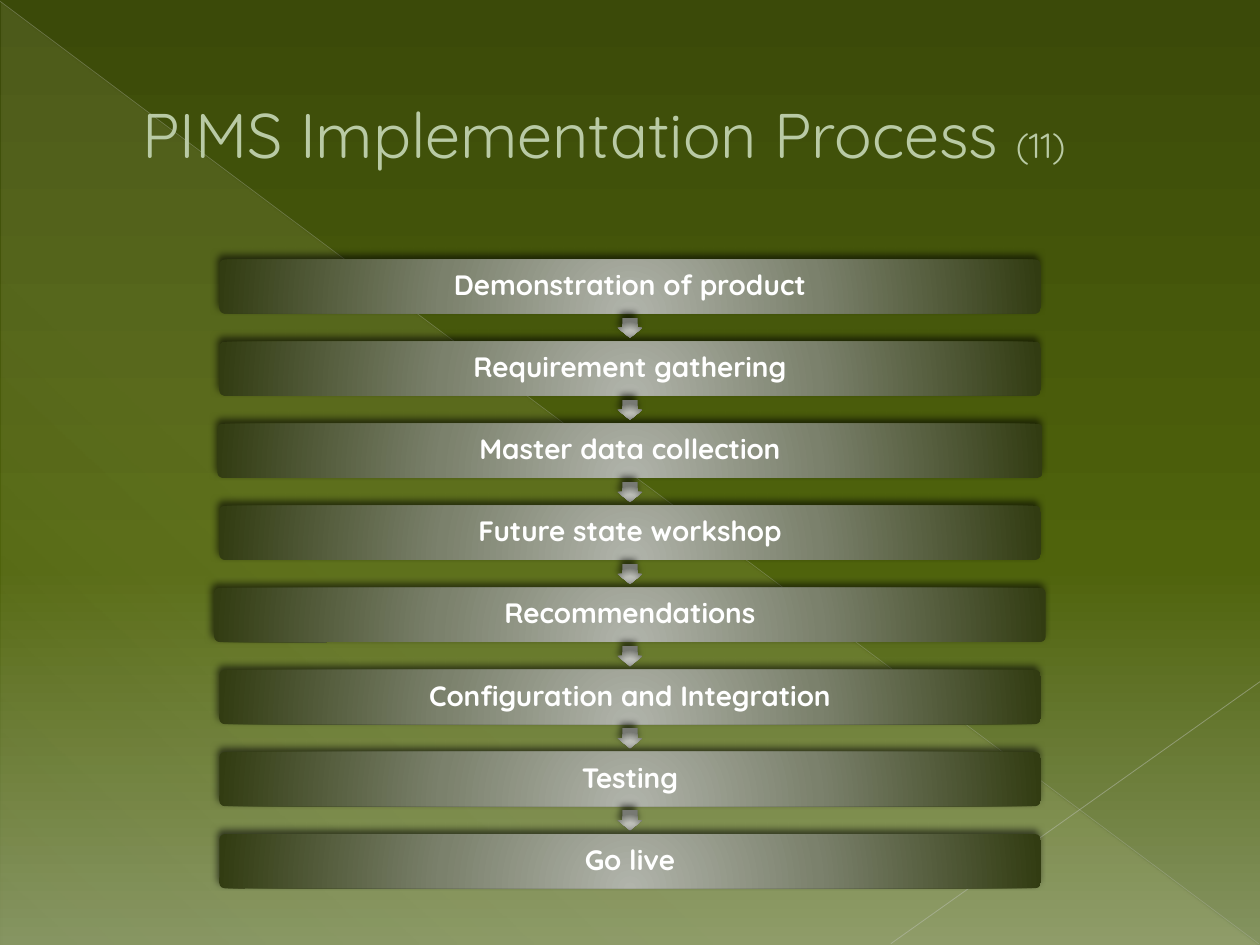
from lxml.etree import SubElement
from pptx import Presentation
from pptx.dml.color import RGBColor
from pptx.enum.shapes import MSO_CONNECTOR, MSO_SHAPE
from pptx.enum.text import MSO_ANCHOR, PP_ALIGN
from pptx.oxml.ns import qn
from pptx.util import Inches, Pt

SLIDE_WIDTH, SLIDE_HEIGHT = 10, 7.5
CENTER = SLIDE_WIDTH / 2
FONT = "Quicksand"

WHITE = RGBColor(0xFF, 0xFF, 0xFF)
BLACK = RGBColor(0x00, 0x00, 0x00)
TITLE_COLOR = RGBColor(0xB9, 0xCA, 0xA5)
TITLE_OUTLINE = RGBColor(0x72, 0x7D, 0x65)
LONG_LINE = RGBColor(0xBA, 0xBD, 0xB3)
SHORT_LINE = RGBColor(0xC1, 0xC4, 0xBC)
CREAM = RGBColor(0xFE, 0xFA, 0xC9)

# Gradient stops: position in percent, colour, opacity in percent
BACKGROUND_STOPS = [
    (0, RGBColor(0x3B, 0x4A, 0x09), 100),
    (60, RGBColor(0x4F, 0x63, 0x0C), 100),
    (100, RGBColor(0x84, 0x93, 0x60), 100),
]
TRIANGLE_STOPS = [(0, CREAM, 10), (70, CREAM, 8), (100, CREAM, 1)]
BAR_STOPS = [
    (0, RGBColor(0xB1, 0xB4, 0xAB), 100),
    (46, RGBColor(0x7B, 0x81, 0x6C), 100),
    (100, RGBColor(0x32, 0x3C, 0x12), 100),
]
ARROW_STOPS = [
    (0, RGBColor(0xD5, 0xD6, 0xD2), 100),
    (46, RGBColor(0xBF, 0xC1, 0xBA), 100),
    (100, RGBColor(0x77, 0x79, 0x73), 100),
]

# Step label and bar width
STEPS = [
    ("Demonstration of product", 6.52),
    ("Requirement gathering", 6.52),
    ("Master data collection", 6.55),
    ("Future state workshop", 6.52),
    ("Recommendations", 6.6),
    ("Configuration and Integration", 6.52),
    ("Testing", 6.52),
    ("Go live", 6.52),
]
FIRST_TOP, LAST_TOP = 2.06, 6.62
STEP_PITCH = (LAST_TOP - FIRST_TOP) / (len(STEPS) - 1)
BAR_HEIGHT = 0.43
ARROW_WIDTH, ARROW_HEIGHT = 0.16, 0.2


def add_color(parent, color, opacity):
    element = SubElement(parent, qn("a:srgbClr"), val=str(color))
    if opacity < 100:
        SubElement(element, qn("a:alpha"), val=str(opacity * 1000))


def paint_gradient(fill, owner, stops, angle=None):
    """Fill linearly at the angle, or from a circle below the shape without one."""
    fill.gradient()
    gradient = next(owner.iter(qn("a:gradFill")))
    for child in list(gradient):
        gradient.remove(child)
    stop_list = SubElement(gradient, qn("a:gsLst"))
    for position, color, opacity in stops:
        stop = SubElement(stop_list, qn("a:gs"), pos=str(position * 1000))
        add_color(stop, color, opacity)
    if angle is None:
        circle = SubElement(gradient, qn("a:path"), path="circle")
        SubElement(circle, qn("a:fillToRect"),
                   l="50000", t="155000", r="50000", b="-55000")
    else:
        SubElement(gradient, qn("a:lin"), ang=str(angle * 60000), scaled="0")


def add_gradient_shape(slide, kind, left, top, width, height, stops, angle=None):
    shape = slide.shapes.add_shape(
        kind, Inches(left), Inches(top), Inches(width), Inches(height))
    paint_gradient(shape.fill, shape.element, stops, angle)
    shape.line.fill.background()
    shape.shadow.inherit = False
    return shape


def add_shadow(shape):
    effects = shape.element.spPr.find(qn("a:effectLst"))
    shadow = SubElement(effects, qn("a:outerShdw"), blurRad=str(Pt(4)),
                        dist=str(Pt(3)), dir=str(245 * 60000), rotWithShape="0")
    add_color(shadow, BLACK, 60)


def add_line(slide, start, end, color, width, opacity):
    line = slide.shapes.add_connector(
        MSO_CONNECTOR.STRAIGHT, *map(Inches, start + end))
    line.line.color.rgb = color
    line.line.width = Pt(width)
    color_element = next(line.element.iter(qn("a:srgbClr")))
    SubElement(color_element, qn("a:alpha"), val=str(opacity * 1000))
    SubElement(line.element.spPr, qn("a:effectLst"))


def add_text(paragraph, text, size, color, bold=False, outline=None):
    run = paragraph.add_run()
    run.text = text
    run.font.name = FONT
    run.font.size = Pt(size)
    run.font.bold = bold
    run.font.color.rgb = color
    if outline is not None:
        line = SubElement(run.font.fill._xPr, qn("a:ln"), w=str(Pt(0.5)))
        add_color(SubElement(line, qn("a:solidFill")), outline, 100)
        run.font.fill._xPr.insert(0, line)


def add_backdrop(slide):
    paint_gradient(slide.background.fill, slide.element, BACKGROUND_STOPS, 90)
    add_gradient_shape(slide, MSO_SHAPE.RIGHT_TRIANGLE, 0.01, 0.02, 9.98, 7.48,
                       TRIANGLE_STOPS, 133)
    add_line(slide, (0, 0.01), (9.99, 7.49), LONG_LINE, 0.39, 35)
    add_line(slide, (10, 5.41), (7.07, 7.49), SHORT_LINE, 0.47, 45)


def add_title(slide):
    box = slide.shapes.add_textbox(
        Inches(0.5), Inches(0.29), Inches(9), Inches(1.53))
    frame = box.text_frame
    frame.word_wrap = True
    frame.vertical_anchor = MSO_ANCHOR.MIDDLE
    paragraph = frame.paragraphs[0]
    properties = paragraph._p.get_or_add_pPr()
    properties.set("marL", str(Inches(0.53)))
    properties.set("indent", "0")
    for text, size in (("PIMS Implementation Process ", 36), ("(11)", 20)):
        add_text(paragraph, text, size, TITLE_COLOR, outline=TITLE_OUTLINE)


def add_step(slide, label, top, width):
    bar = add_gradient_shape(slide, MSO_SHAPE.ROUNDED_RECTANGLE,
                             CENTER - width / 2, top, width, BAR_HEIGHT, BAR_STOPS)
    bar.adjustments[0] = 0.1
    add_shadow(bar)
    frame = bar.text_frame
    frame.word_wrap = True
    frame.vertical_anchor = MSO_ANCHOR.MIDDLE
    frame.margin_left = frame.margin_right = Inches(0.07)
    frame.margin_top = frame.margin_bottom = Inches(0.07)
    paragraph = frame.paragraphs[0]
    paragraph.alignment = PP_ALIGN.CENTER
    paragraph.line_spacing = 0.9
    paragraph.space_after = Pt(5.6)
    add_text(paragraph, label, 16, WHITE, bold=True)


def add_step_arrow(slide, bar_top):
    gap_middle = bar_top + (STEP_PITCH + BAR_HEIGHT) / 2
    arrow = add_gradient_shape(
        slide, MSO_SHAPE.RIGHT_ARROW, CENTER - ARROW_WIDTH / 2,
        gap_middle - ARROW_HEIGHT / 2, ARROW_WIDTH, ARROW_HEIGHT, ARROW_STOPS)
    arrow.adjustments[0] = 0.6
    arrow.adjustments[1] = 0.5
    arrow.rotation = 90
    add_shadow(arrow)


def main():
    presentation = Presentation()
    presentation.slide_width = Inches(SLIDE_WIDTH)
    presentation.slide_height = Inches(SLIDE_HEIGHT)
    slide = presentation.slides.add_slide(presentation.slide_layouts[6])
    add_backdrop(slide)
    add_title(slide)
    for index, (label, width) in enumerate(STEPS):
        top = FIRST_TOP + index * STEP_PITCH
        add_step(slide, label, top, width)
        if index < len(STEPS) - 1:
            add_step_arrow(slide, top)
    presentation.save("out.pptx")


if __name__ == "__main__":
    main()
